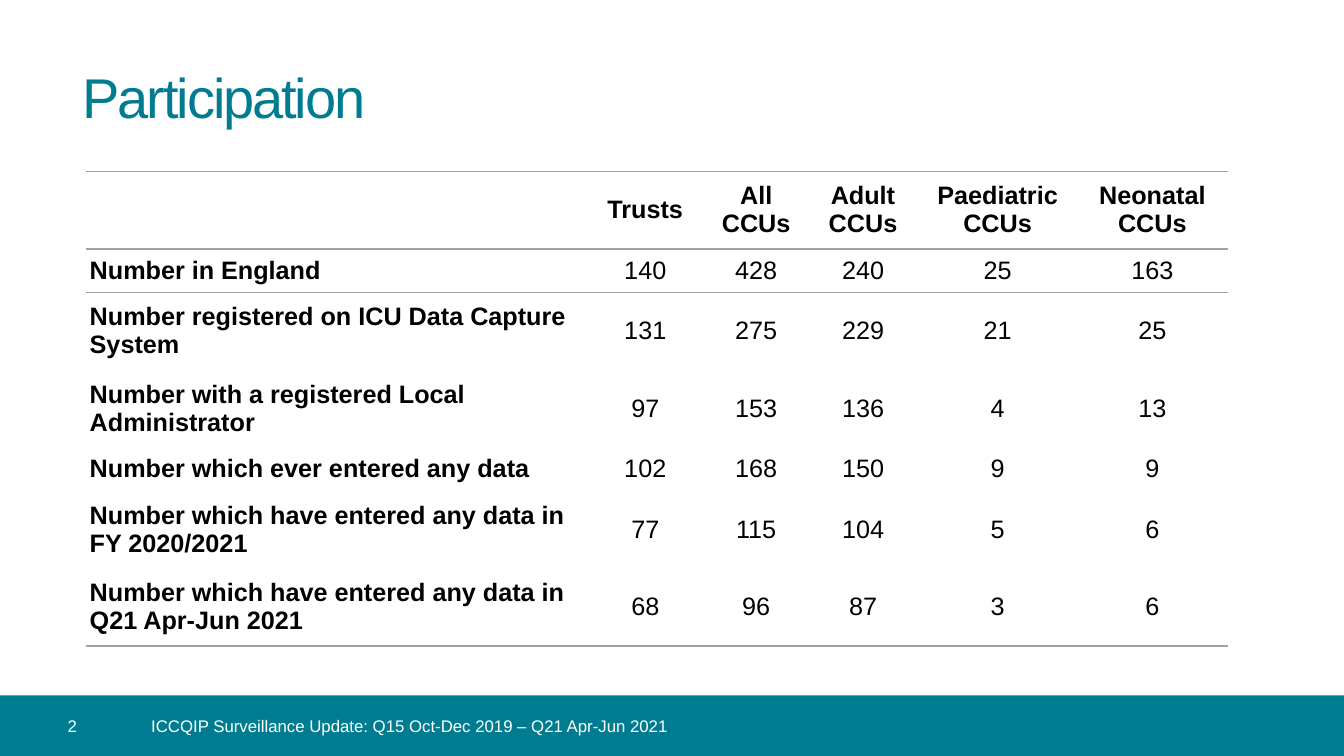
from lxml.etree import SubElement
from pptx import Presentation
from pptx.dml.color import RGBColor
from pptx.enum.shapes import MSO_SHAPE
from pptx.enum.text import MSO_ANCHOR, PP_ALIGN
from pptx.oxml.ns import qn
from pptx.util import Pt

PX = 9144  # EMU per px, 100 px to the inch
TEAL = RGBColor(0x00, 0x7C, 0x91)
RULE_GREY = RGBColor(0x98, 0xA4, 0xAE)
BLACK = RGBColor(0, 0, 0)
WHITE = RGBColor(0xFF, 0xFF, 0xFF)
PLAIN_TABLE_STYLE = "{2D5ABB26-0587-4C30-8999-92F81FD0307C}"

COLUMN_WIDTHS = [496, 118, 102, 110, 157, 150]
TALL_ROW, SHORT_ROW = 77, 43
SHORT_ROWS = (1, 4)
PARTICIPATION = [
    ["", "Trusts", "All CCUs", "Adult CCUs", "Paediatric CCUs", "Neonatal CCUs"],
    ["Number in England", 140, 428, 240, 25, 163],
    ["Number registered on ICU Data Capture System", 131, 275, 229, 21, 25],
    ["Number with a registered Local Administrator", 97, 153, 136, 4, 13],
    ["Number which ever entered any data", 102, 168, 150, 9, 9],
    ["Number which have entered any data in FY 2020/2021", 77, 115, 104, 5, 6],
    ["Number which have entered any data in Q21 Apr-Jun 2021", 68, 96, 87, 3, 6],
]


class SlideBuilder:
    font_name = "Arial"

    def __init__(self, slide):
        self.slide = slide

    def box(self, *bounds):
        return [length * PX for length in bounds]

    def style(self, paragraph, size, color, bold=False, spacing=None):
        for run in paragraph.runs:
            run.font.name = self.font_name
            run.font.size = Pt(size)
            run.font.color.rgb = color
            run.font.bold = bold
            if spacing is not None:
                run.font._element.set("spc", str(spacing))

    def fill_frame(self, frame, text, size, color, indent=0, spacing=None):
        frame.word_wrap = True
        frame.vertical_anchor = MSO_ANCHOR.MIDDLE
        frame.margin_left = indent * PX
        frame.margin_top = frame.margin_right = frame.margin_bottom = 0
        frame.text = text
        frame.paragraphs[0].alignment = PP_ALIGN.LEFT
        self.style(frame.paragraphs[0], size, color, spacing=spacing)

    def text(self, bounds, text, size, color, **options):
        label = self.slide.shapes.add_textbox(*self.box(*bounds))
        self.fill_frame(label.text_frame, text, size, color, **options)

    def bar(self, bounds, fill, text, size, color, **options):
        band = self.slide.shapes.add_shape(MSO_SHAPE.RECTANGLE, *self.box(*bounds))
        band.shadow.inherit = False
        band.fill.solid()
        band.fill.fore_color.rgb = fill
        band.line.fill.background()
        self.fill_frame(band.text_frame, text, size, color, **options)

    def rule(self, cell, edge):
        line = SubElement(cell._tc.get_or_add_tcPr(), qn(f"a:{edge}"), w=str(Pt(1)))
        solid = SubElement(line, qn("a:solidFill"))
        SubElement(solid, qn("a:srgbClr"), val=str(RULE_GREY))

    def table_cell(self, cell, value, edges, is_label, bold):
        cell.margin_left = cell.margin_right = 4 * PX
        cell.margin_top = cell.margin_bottom = 4 * PX
        cell.vertical_anchor = MSO_ANCHOR.MIDDLE
        for edge in edges:
            self.rule(cell, edge)
        cell.fill.background()
        cell.text_frame.text = str(value)
        paragraph = cell.text_frame.paragraphs[0]
        paragraph.alignment = PP_ALIGN.LEFT if is_label else PP_ALIGN.CENTER
        paragraph.line_spacing = Pt(20)
        self.style(paragraph, 18, BLACK, bold=bold)

    def table(self, left, top, rows, widths, heights):
        bounds = self.box(left, top, sum(widths), sum(heights))
        grid = self.slide.shapes.add_table(len(rows), len(widths), *bounds).table
        grid.first_row = grid.horz_banding = False
        grid._tbl.tblPr.find(qn("a:tableStyleId")).text = PLAIN_TABLE_STYLE
        for column, width in zip(grid.columns, widths):
            column.width = width * PX
        for row, height in zip(grid.rows, heights):
            row.height = height * PX
        # Rules frame the header row and close the last row
        edges = {0: ("lnT", "lnB"), 1: ("lnT",), len(rows) - 1: ("lnB",)}
        for r, values in enumerate(rows):
            for c, value in enumerate(values):
                self.table_cell(grid.cell(r, c), value, edges.get(r, ()),
                                is_label=c == 0, bold=r == 0 or c == 0)


def main():
    deck = Presentation()
    deck.slide_width, deck.slide_height = 1333 * PX, 750 * PX
    page = SlideBuilder(deck.slides.add_slide(deck.slide_layouts[6]))

    # Title
    page.text((82, 60, 1171, 71), "Participation", 40, TEAL, spacing=-150)

    # Participation table
    heights = [SHORT_ROW if r in SHORT_ROWS else TALL_ROW
               for r in range(len(PARTICIPATION))]
    page.table(85, 170, PARTICIPATION, COLUMN_WIDTHS, heights)

    # Footer with page number
    page.bar((0, 690, 1333, 60), TEAL, "2", 12, WHITE, indent=67)
    page.text((131, 690, 1176, 60),
              "ICCQIP Surveillance Update: Q15 Oct-Dec 2019 – Q21 Apr-Jun 2021",
              12, WHITE, indent=19)

    deck.save("out.pptx")


if __name__ == "__main__":
    main()
